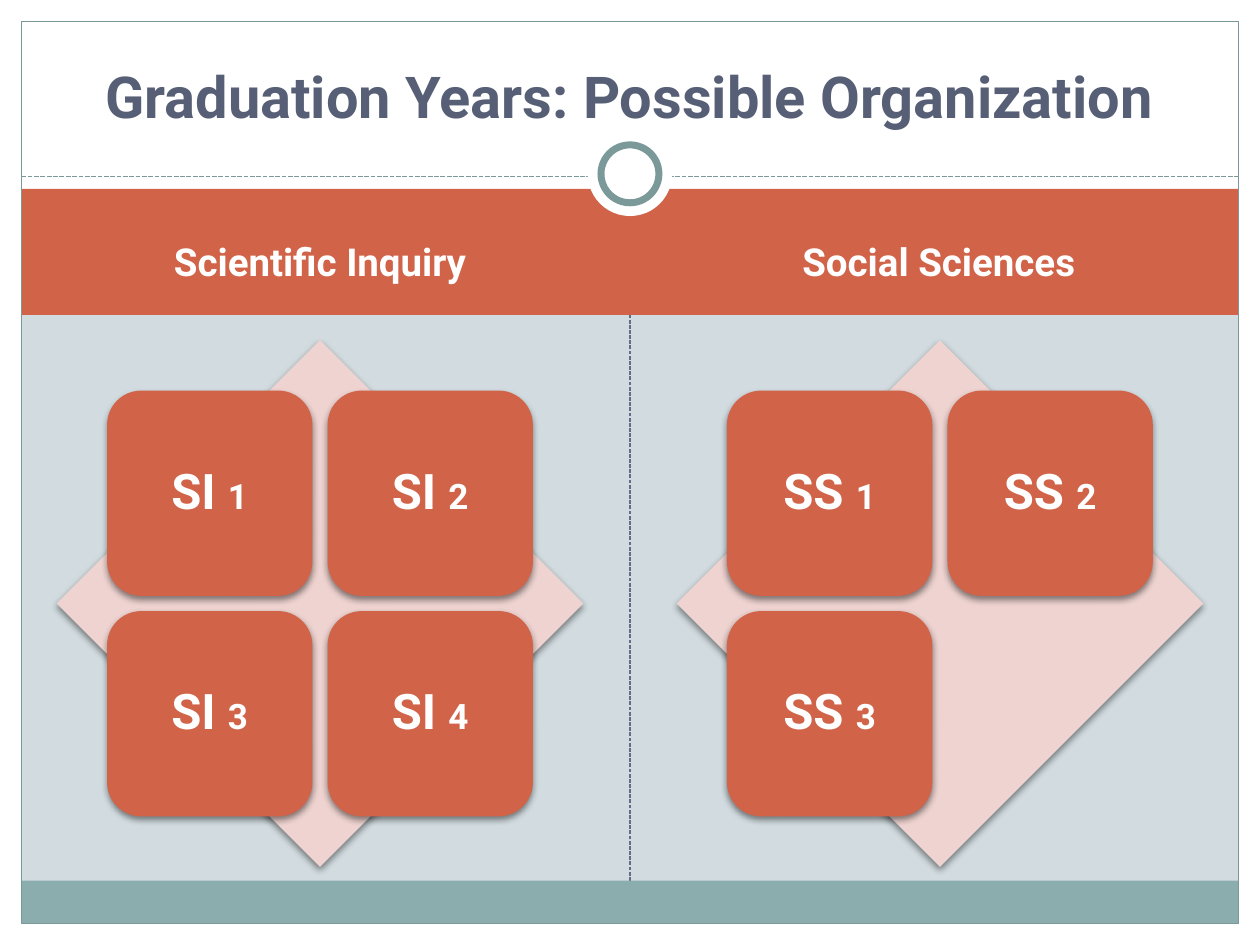
from dataclasses import dataclass
from typing import Optional

from lxml import etree
from pptx import Presentation
from pptx import util as u
from pptx.dml.color import RGBColor
from pptx.enum import dml, shapes, text
from pptx.oxml.ns import qn

W, H = 10, 7.5
EDGE = 0.17                  # white frame around the slide
INNER_W = W - 2 * EDGE
FOOT_Y = 6.99
FONT = "Roboto"
WHITE, RUST, TEAL, PALE = "FFFFFF", "D16349", "7C999A", "EED3D0"
TILE, PITCH, TILE_INSET, DIAMOND = 1.63, 1.75, 0.4, 4.18
KIND = shapes.MSO_SHAPE


@dataclass
class Box:
    x: float
    y: float
    w: float
    h: float


@dataclass
class Panel:
    heading: str
    code: str
    count: int
    head_x: float
    diamond_x: float


PANELS = [
    Panel("Scientific Inquiry", "SI", 4, 0.33, 0.45),
    Panel("Social Sciences", "SS", 3, 5.24, 5.37),
]


def color(value: str) -> RGBColor:
    return RGBColor.from_string(value)


def place(b: Box) -> list:
    return [u.Inches(v) for v in (b.x, b.y, b.w, b.h)]


def add_shape(s, kind, b: Box, fill: Optional[str] = None,
              line: Optional[str] = None, width: float = 0.75):
    sp = s.shapes.add_shape(kind, *place(b))
    sp.shadow.inherit = False
    if fill:
        sp.fill.solid()
        sp.fill.fore_color.rgb = color(fill)
    else:
        sp.fill.background()
    if line:
        sp.line.color.rgb = color(line)
        sp.line.width = u.Pt(width)
    else:
        sp.line.fill.background()
    return sp


def add_shadow(sp) -> None:
    effects = sp._element.spPr.find(qn("a:effectLst"))
    shadow = etree.SubElement(effects, qn("a:outerShdw"), blurRad=str(u.Pt(4)),
                              dist=str(u.Pt(2)), dir="5400000", rotWithShape="0")
    black = etree.SubElement(shadow, qn("a:srgbClr"), val="000000")
    etree.SubElement(black, qn("a:alpha"), val="45000")


def add_dashes(s, x1: float, y1: float, x2: float, y2: float,
               line: str, width: float) -> None:
    c = s.shapes.add_connector(shapes.MSO_CONNECTOR.STRAIGHT,
                               *[u.Inches(v) for v in (x1, y1, x2, y2)])
    c.line.color.rgb = color(line)
    c.line.width = u.Pt(width)
    c.line.dash_style = dml.MSO_LINE.SQUARE_DOT
    etree.SubElement(c._element.spPr, qn("a:effectLst"))


def write(sp, runs: list, ink: str = WHITE, anchor=text.MSO_ANCHOR.MIDDLE,
          margin: Optional[float] = None, spacing: float = 1.0) -> None:
    tf = sp.text_frame
    frame = {"word_wrap": True, "vertical_anchor": anchor}
    if margin is not None:
        for side in ("left", "right", "top", "bottom"):
            frame["margin_" + side] = u.Inches(margin)
    for name, value in frame.items():
        setattr(tf, name, value)
    p = tf.paragraphs[0]
    p.alignment = text.PP_ALIGN.CENTER
    p.line_spacing = spacing
    for words, size in runs:
        r = p.add_run()
        r.text = words
        for name, value in {"name": FONT, "size": u.Pt(size), "bold": True}.items():
            setattr(r.font, name, value)
        r.font.color.rgb = color(ink)


def draw_frame(s) -> None:
    # Divider between the two panels
    add_dashes(s, W / 2, FOOT_Y, W / 2, 2.41, "646B86", 0.75)
    # White margins, heading band and footer band
    for b, fill in [
        (Box(0, 0, W, 1.58), WHITE),
        (Box(0, H - EDGE, W, EDGE), WHITE),
        (Box(0, 0, EDGE, H), WHITE),
        (Box(W - EDGE, 0, EDGE, H), WHITE),
        (Box(EDGE, 1.5, INNER_W, 1), RUST),
        (Box(EDGE, FOOT_Y, INNER_W, H - EDGE - FOOT_Y), "8CADAE"),
    ]:
        add_shape(s, KIND.RECTANGLE, b, fill)
    add_dashes(s, EDGE, 1.4, W - EDGE, 1.4, TEAL, 0.9)
    add_shape(s, KIND.RECTANGLE, Box(EDGE, EDGE, INNER_W, H - 2 * EDGE), line=TEAL)
    # Ring on the dashed rule
    for size, line in [(0.67, None), (0.46, TEAL)]:
        b = Box((W - size) / 2, 1.38 - size / 2, size, size)
        add_shape(s, KIND.OVAL, b, WHITE, line, 4)


def draw_panel(s, panel: Panel) -> None:
    head = s.shapes.add_textbox(*place(Box(panel.head_x, 1.67, 4.42, 0.8)))
    write(head, [(panel.heading, 22)])
    top = 2.7
    add_shadow(add_shape(s, KIND.DIAMOND,
                         Box(panel.diamond_x, top, DIAMOND, DIAMOND), PALE))
    # Numbered tiles, two to a row
    for i in range(panel.count):
        row, col = divmod(i, 2)
        b = Box(panel.diamond_x + TILE_INSET + col * PITCH,
                top + TILE_INSET + row * PITCH, TILE, TILE)
        tile = add_shape(s, KIND.ROUNDED_RECTANGLE, b, RUST)
        add_shadow(tile)
        write(tile, [(panel.code + " ", 28), (str(i + 1), 20)],
              margin=0.12, spacing=0.9)


def main() -> None:
    prs = Presentation()
    prs.slide_width, prs.slide_height = u.Inches(W), u.Inches(H)
    s = prs.slides.add_slide(prs.slide_layouts[6])
    s.background.fill.solid()
    s.background.fill.fore_color.rgb = color("D2DCE0")
    draw_frame(s)
    for panel in PANELS:
        draw_panel(s, panel)
    title = s.shapes.add_textbox(*place(Box(0.33, 0.25, 9.33, 0.83)))
    write(title, [("Graduation Years: Possible Organization", 33)],
          "565F75", text.MSO_ANCHOR.BOTTOM)
    prs.save("out.pptx")


if __name__ == "__main__":
    main()
